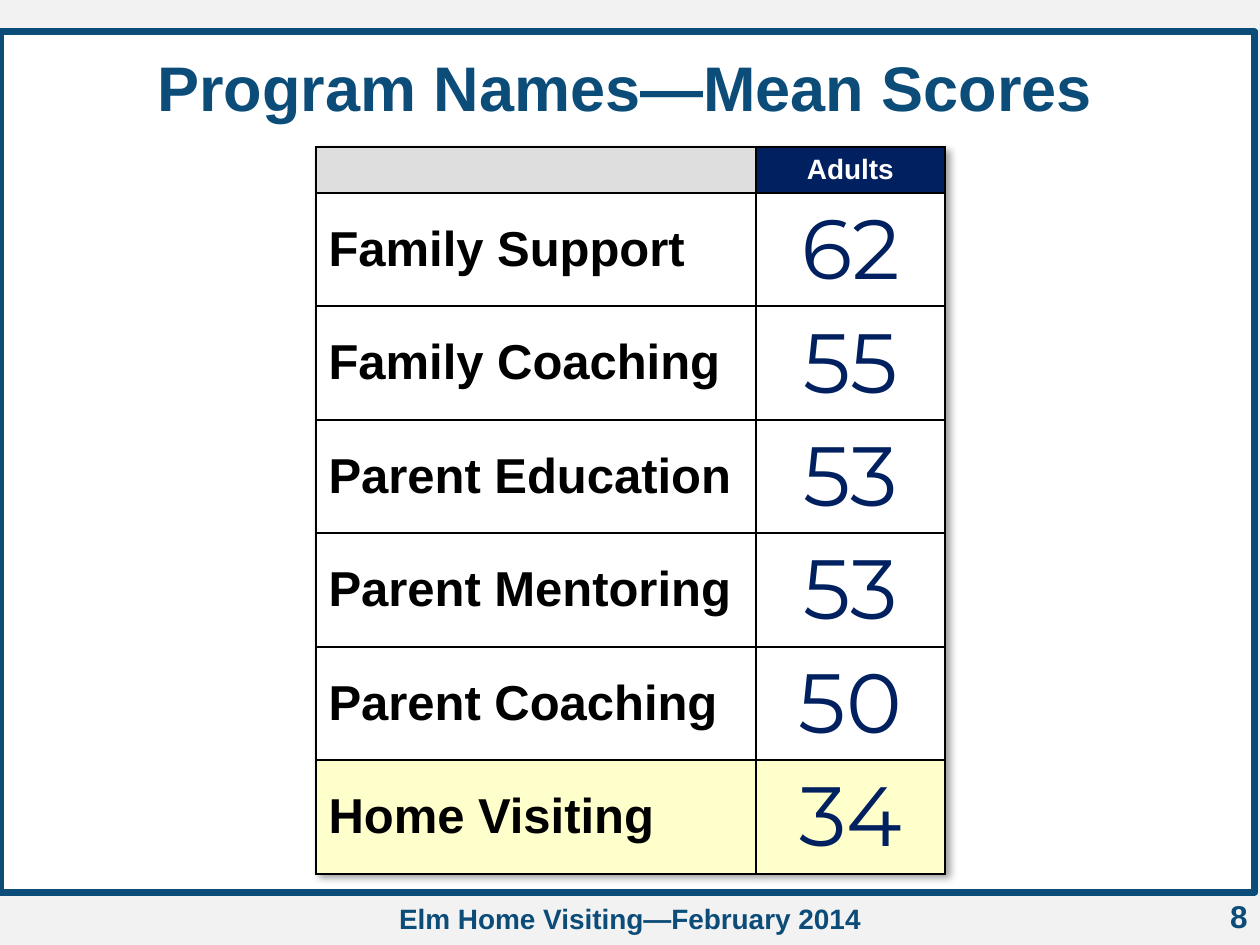
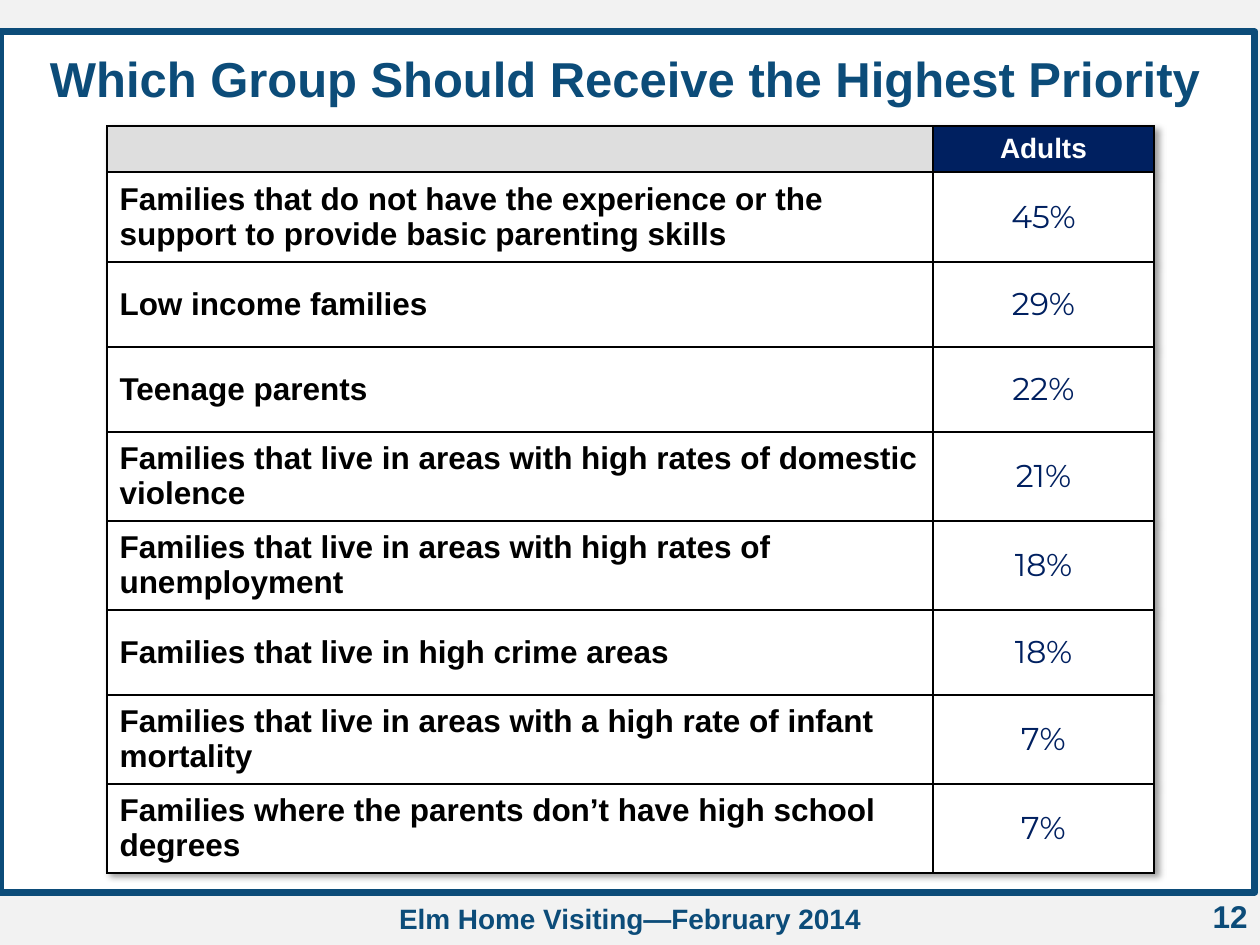
from lxml import etree
from pptx import Presentation, util as u
from pptx.dml.color import RGBColor
from pptx.enum import shapes, text
from pptx.oxml import ns, parse_xml

PX = 914400 / 126
C = {"page": "F2F2F2", "white": "FFFFFF", "blue": "0C4C79", "navy": "002060",
     "black": "000000", "grey": "DEDEDE", "yellow": "FFFFCC"}
LEFT, CENTER, RIGHT = text.PP_ALIGN.LEFT, text.PP_ALIGN.CENTER, text.PP_ALIGN.RIGHT
FOOTER = "Elm Home Visiting—February 2014"
HEADER_HEIGHT = 46
SHADOW = (f'<a:effectLst {ns.nsdecls("a")}><a:outerShdw blurRad="50800" dist="38100" dir="2700000" '
          'algn="tl" rotWithShape="0"><a:srgbClr val="000000"><a:alpha val="40000"/></a:srgbClr>'
          '</a:outerShdw></a:effectLst>')

SLIDES = [
    {"number": 8, "title": "Program Names—Mean Scores", "title_size": 36, "title_height": 90,
     "left": 316, "top": 147, "widths": (440, 189), "label_size": 28, "value_size": 48,
     "rows": [("Family Support", "62", 113), ("Family Coaching", "55", 114),
              ("Parent Education", "53", 113), ("Parent Mentoring", "53", 114),
              ("Parent Coaching", "50", 113), ("Home Visiting", "34", 114)],
     "highlight": "Home Visiting"},
    {"number": 12, "title": "Which Group Should Receive the Highest Priority",
     "title_size": 28, "title_height": 72,
     "left": 107, "top": 126, "widths": (826, 221), "label_size": 18, "value_size": 18,
     "rows": [("Families that do not have the experience or the support to provide basic parenting skills", "45%", 90),
              ("Low income families", "29%", 85),
              ("Teenage parents", "22%", 85),
              ("Families that live in areas with high rates of domestic violence", "21%", 89),
              ("Families that live in areas with high rates of unemployment", "18%", 89),
              ("Families that live in high crime areas", "18%", 85),
              ("Families that live in areas with a high rate of infant mortality", "7%", 89),
              ("Families where the parents don’t have high school degrees", "7%", 89)],
     "highlight": None},
]


def px(*lengths):
    return [u.Emu(round(n * PX)) for n in lengths]


def write(tf, words, size, color, align, font="Arial", bold=True):
    tf.word_wrap = True
    tf.text = words
    p = tf.paragraphs[0]
    p.alignment = align
    for r in p.runs:
        r.font.name, r.font.size, r.font.bold = font, u.Pt(size), bold
        r.font.color.rgb = RGBColor.from_string(C[color])
    if not words:
        etree.SubElement(p._p, ns.qn("a:endParaRPr"), sz=str(size * 100))


prs = Presentation()
prs.slide_width, prs.slide_height = px(1260, 945)

for data in SLIDES:
    s = prs.slides.add_slide(prs.slide_layouts[6])
    s.background.fill.solid()
    s.background.fill.fore_color.rgb = RGBColor.from_string(C["page"])

    frame = s.shapes.add_shape(shapes.MSO_SHAPE.ROUNDED_RECTANGLE, *px(1, 32, 1254, 860))
    frame.adjustments[0] = 0
    frame.shadow.inherit = False
    frame.fill.solid()
    frame.fill.fore_color.rgb = RGBColor.from_string(C["white"])
    frame.line.color.rgb = RGBColor.from_string(C["blue"])
    frame.line.width = u.Pt(4)

    for words, box, size, align in [
        (str(data["number"]), (966, 891, 294, 54), 18, RIGHT),
        (FOOTER, (319, 895, 622, 47), 16, CENTER),
        (data["title"], (0, 42, 1250, data["title_height"]), data["title_size"], CENTER),
    ]:
        sp = s.shapes.add_textbox(*px(*box))
        write(sp.text_frame, words, size, "blue", align)

    heights = [HEADER_HEIGHT] + [height for _, _, height in data["rows"]]
    table = s.shapes.add_table(len(heights), 2, *px(
        data["left"], data["top"], sum(data["widths"]), sum(heights))).table
    table._tbl.tblPr.insert(0, parse_xml(SHADOW))
    for column, width in zip(table.columns, px(*data["widths"])):
        column.width = width
    for row, height in zip(table.rows, px(*heights)):
        row.height = height

    write(table.cell(0, 0).text_frame, "", 16, "black", LEFT)
    write(table.cell(0, 1).text_frame, "Adults", 16, "white", CENTER)
    fills = [("grey", "navy")]
    for i, (label, value, _) in enumerate(data["rows"], 1):
        write(table.cell(i, 0).text_frame, label, data["label_size"], "black", LEFT)
        write(table.cell(i, 1).text_frame, value, data["value_size"], "navy", CENTER,
              "Montserrat", False)
        fills.append(("yellow" if label == data["highlight"] else "white",) * 2)

    for row, row_fills in zip(table.rows, fills):
        for cell, fill in zip(row.cells, row_fills):
            cell.vertical_anchor = text.MSO_ANCHOR.MIDDLE
            cell.margin_top = cell.margin_bottom = px(4)[0]
            cell.fill.solid()
            cell.fill.fore_color.rgb = RGBColor.from_string(C[fill])
            for i, side in enumerate("LRTB"):
                cell._tc.tcPr.insert(i, parse_xml(
                    f'<a:ln{side} {ns.nsdecls("a")} w="12700"><a:solidFill>'
                    f'<a:srgbClr val="{C["black"]}"/></a:solidFill></a:ln{side}>'))

prs.save("out.pptx")
